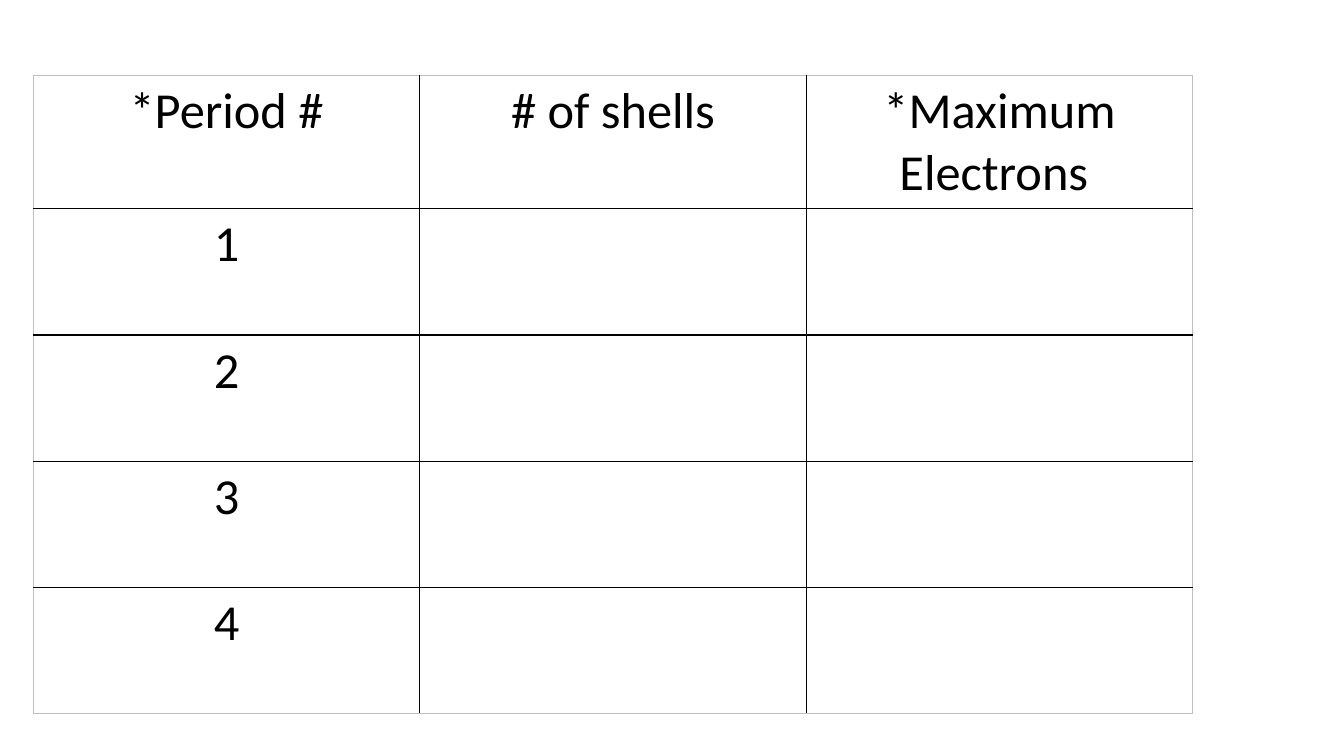
"""Build a worksheet slide relating periods to electron shells."""
import dataclasses

import lxml.etree
import pptx
import pptx.dml.color
import pptx.enum.text
import pptx.oxml.ns
import pptx.table
import pptx.util


@dataclasses.dataclass(frozen=True)
class Theme:
    """Colours, font and line widths of the worksheet."""

    font: str = "Calibri"
    text_size: float = 36
    ink: str = "000000"
    paper: str = "FFFFFF"
    frame: str = "BFBFBF"
    rule_width: float = 1
    frame_width: float = 0.75


@dataclasses.dataclass(frozen=True)
class Border:
    """One side of a cell, on the outer frame or between cells."""

    side: str
    outer: bool


@dataclasses.dataclass(frozen=True)
class PeriodRow:
    """Entries of one worksheet row and its height in centimetres."""

    entries: tuple[str, ...]
    height: float = 3.18


THEME = Theme()
COLUMN_WIDTH = 9.74
ROWS = [PeriodRow(("*Period #", "# of shells", "*Maximum Electrons "), 3.36)]
ROWS += [PeriodRow((str(period), "", "")) for period in range(1, 5)]


def draw_border(cell: pptx.table._Cell, border: Border) -> None:
    """Draw one side of a cell."""
    width = THEME.frame_width if border.outer else THEME.rule_width
    line = lxml.etree.SubElement(
        cell._tc.get_or_add_tcPr(),
        pptx.oxml.ns.qn(f"a:ln{border.side}"),
        w=str(int(pptx.util.Pt(width))),
    )
    fill = lxml.etree.SubElement(line, pptx.oxml.ns.qn("a:solidFill"))
    lxml.etree.SubElement(
        fill,
        pptx.oxml.ns.qn("a:srgbClr"),
        val=THEME.frame if border.outer else THEME.ink,
    )


def write_entry(cell: pptx.table._Cell, entry: str) -> None:
    """Write a centred entry into a cell."""
    paragraph = cell.text_frame.paragraphs[0]
    paragraph.alignment = pptx.enum.text.PP_ALIGN.CENTER
    run = paragraph.add_run()
    run.text = entry
    text_format = {
        "name": THEME.font,
        "size": pptx.util.Pt(THEME.text_size),
        "bold": False,
    }
    for attribute, value in text_format.items():
        setattr(run.font, attribute, value)
    run.font.color.rgb = pptx.dml.color.RGBColor.from_string(THEME.ink)


def fill_worksheet(worksheet: pptx.table.Table) -> None:
    """Size the worksheet and fill each of its cells."""
    last_row, last_column = len(ROWS) - 1, len(ROWS[0].entries) - 1
    for column in worksheet.columns:
        column.width = pptx.util.Cm(COLUMN_WIDTH)
    for row_index, period_row in enumerate(ROWS):
        worksheet.rows[row_index].height = pptx.util.Cm(period_row.height)
        for column_index, entry in enumerate(period_row.entries):
            cell = worksheet.cell(row_index, column_index)
            borders = (
                Border("L", column_index == 0),
                Border("R", column_index == last_column),
                Border("T", row_index == 0),
                Border("B", row_index == last_row),
            )
            for border in borders:
                draw_border(cell, border)
            cell.fill.solid()
            cell.fill.fore_color.rgb = pptx.dml.color.RGBColor.from_string(THEME.paper)
            if entry:
                write_entry(cell, entry)


def main() -> None:
    """Build and save the presentation."""
    presentation = pptx.Presentation()
    presentation.slide_width = pptx.util.Cm(33.87)
    presentation.slide_height = pptx.util.Cm(19.05)
    slide = presentation.slides.add_slide(presentation.slide_layouts[6])
    columns = len(ROWS[0].entries)
    worksheet = slide.shapes.add_table(
        len(ROWS),
        columns,
        pptx.util.Cm(0.84),
        pptx.util.Cm(1.9),
        pptx.util.Cm(COLUMN_WIDTH * columns),
        pptx.util.Cm(sum(row.height for row in ROWS)),
    ).table
    for option in ("first_row", "horz_banding"):
        setattr(worksheet, option, False)
    fill_worksheet(worksheet)
    presentation.save("out.pptx")


if __name__ == "__main__":
    main()
